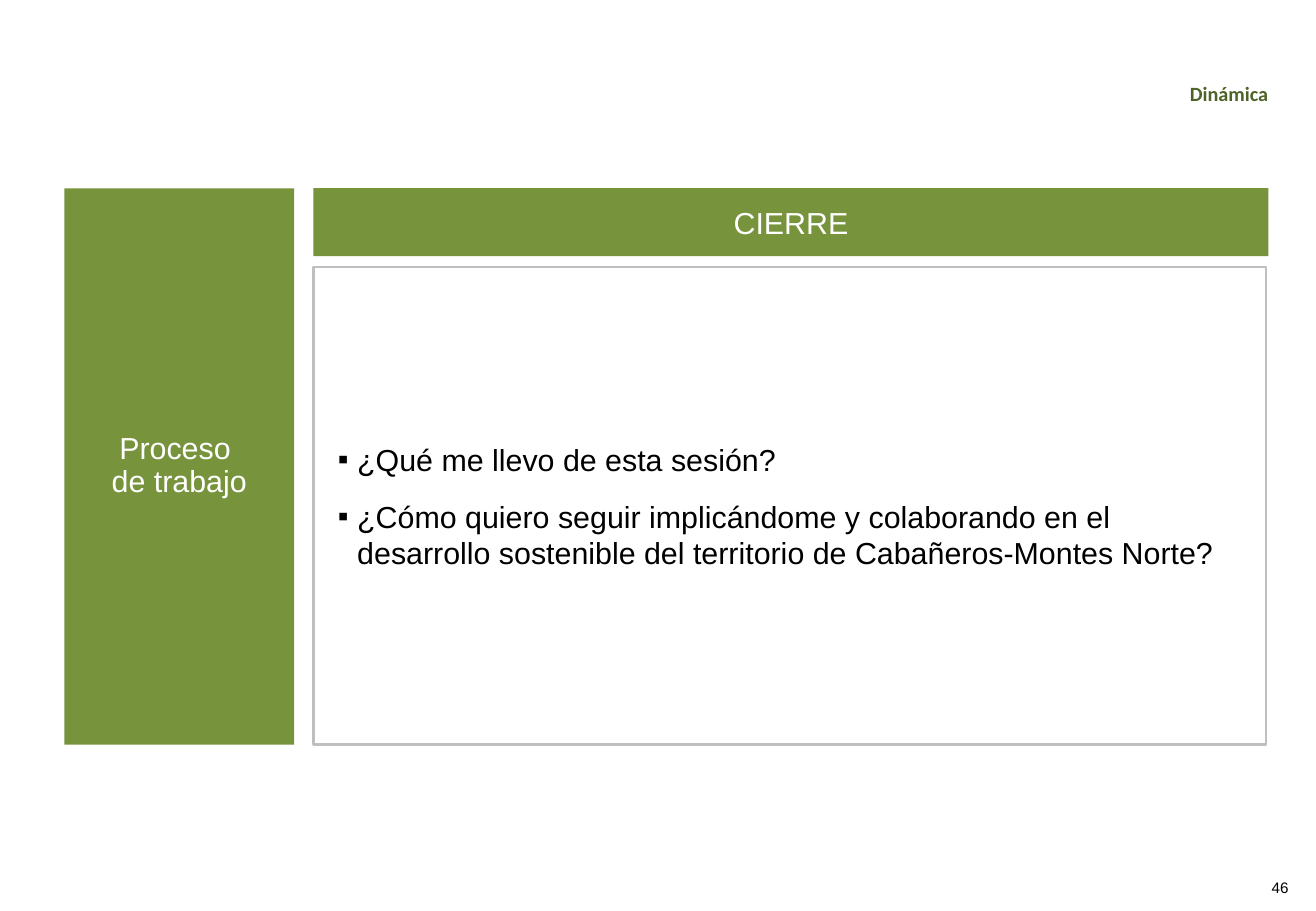
from lxml import etree
from pptx import Presentation
from pptx.dml.color import RGBColor
from pptx.enum.shapes import MSO_SHAPE as Shape
from pptx.enum.text import MSO_ANCHOR as Anchor, MSO_AUTO_SIZE as AutoSize, PP_ALIGN as Align
from pptx.oxml.ns import qn
from pptx.util import Pt

PX = 9144  # 100 px to the inch
COLORS = {"green": "77933C", "dark_green": "4F6228", "gray": "BFBFBF",
          "white": "FFFFFF", "black": "000000"}

TITLE_BOX = (959, 65, 105, 27)
PROCESS_BOX = (53, 155, 189, 458)
CLOSING_BOX = (258, 155, 786, 458)
NUMBER_BOX = (1030, 721, 47, 19)

QUESTIONS = [
    "¿Qué me llevo de esta sesión?",
    "¿Cómo quiero seguir implicándome y colaborando en el desarrollo "
    "sostenible del territorio de Cabañeros-Montes Norte?",
]


def color(name):
    return RGBColor.from_string(COLORS[name])


def place(shape, box):
    shape.left, shape.top, shape.width, shape.height = (length * PX for length in box)


def write(shape, lines, size, ink, font="Arial", bold=False, align=Align.CENTER,
          spacing=1.0, after=0, margins=(10, 5)):
    frame = shape.text_frame
    frame.word_wrap = True
    frame.auto_size = AutoSize.NONE
    frame.vertical_anchor = Anchor.MIDDLE
    frame.margin_left = frame.margin_right = margins[0] * PX
    frame.margin_top = frame.margin_bottom = margins[1] * PX
    for index, line in enumerate(lines):
        paragraph = frame.add_paragraph() if index else frame.paragraphs[0]
        paragraph.alignment = align
        paragraph.line_spacing = spacing
        paragraph.space_before = Pt(0)
        paragraph.space_after = Pt(after)
        run = paragraph.add_run()
        run.text = line
        run.font.name = font
        run.font.size = Pt(size)
        run.font.bold = bold
        run.font.color.rgb = color(ink)


def add_bullet(paragraph, indent):
    properties = paragraph._p.get_or_add_pPr()
    properties.set("marL", str(indent * PX))
    properties.set("indent", str(-indent * PX))
    etree.SubElement(properties, qn("a:buFont")).set("typeface", "Arial")
    etree.SubElement(properties, qn("a:buChar")).set("char", "▪")


def add_panel(slide, box, lines, spacing=1.0):
    panel = slide.shapes.add_shape(Shape.RECTANGLE, 0, 0, 0, 0)
    place(panel, box)
    panel.shadow.inherit = False
    panel.fill.solid()
    panel.fill.fore_color.rgb = color("green")
    panel.line.fill.background()
    write(panel, lines, 18, "white", spacing=spacing)


def add_section_title(slide, box):
    title = slide.shapes.title
    place(title, box)
    write(title, ["Dinámica"], 12, "dark_green", font="Calibri", bold=True, spacing=0.85)


def add_closing(slide, box):
    left, top, width, height = box
    header_height, gap = 56, 9
    add_panel(slide, (left, top, width, header_height), ["CIERRE"])

    # Framed list of questions
    body = slide.placeholders[1]
    offset = header_height + gap
    place(body, (left, top + offset, width - 2, height - offset))
    body.line.color.rgb = color("gray")
    body.line.width = Pt(1.5)
    write(body, QUESTIONS, 18, "black", align=Align.LEFT, after=12, margins=(20, 12))
    for paragraph in body.text_frame.paragraphs:
        add_bullet(paragraph, 16)


def add_page_number(slide, box):
    number = slide.shapes.add_textbox(0, 0, 0, 0)
    place(number, box)
    write(number, ["46"], 9, "black", margins=(0, 0))


def main():
    presentation = Presentation()
    presentation.slide_width = 1083 * PX
    presentation.slide_height = 750 * PX
    slide = presentation.slides.add_slide(presentation.slide_layouts[1])
    add_section_title(slide, TITLE_BOX)
    add_panel(slide, PROCESS_BOX, ["Proceso ", "de trabajo"], spacing=0.9)
    add_closing(slide, CLOSING_BOX)
    add_page_number(slide, NUMBER_BOX)
    presentation.save("out.pptx")


if __name__ == "__main__":
    main()
